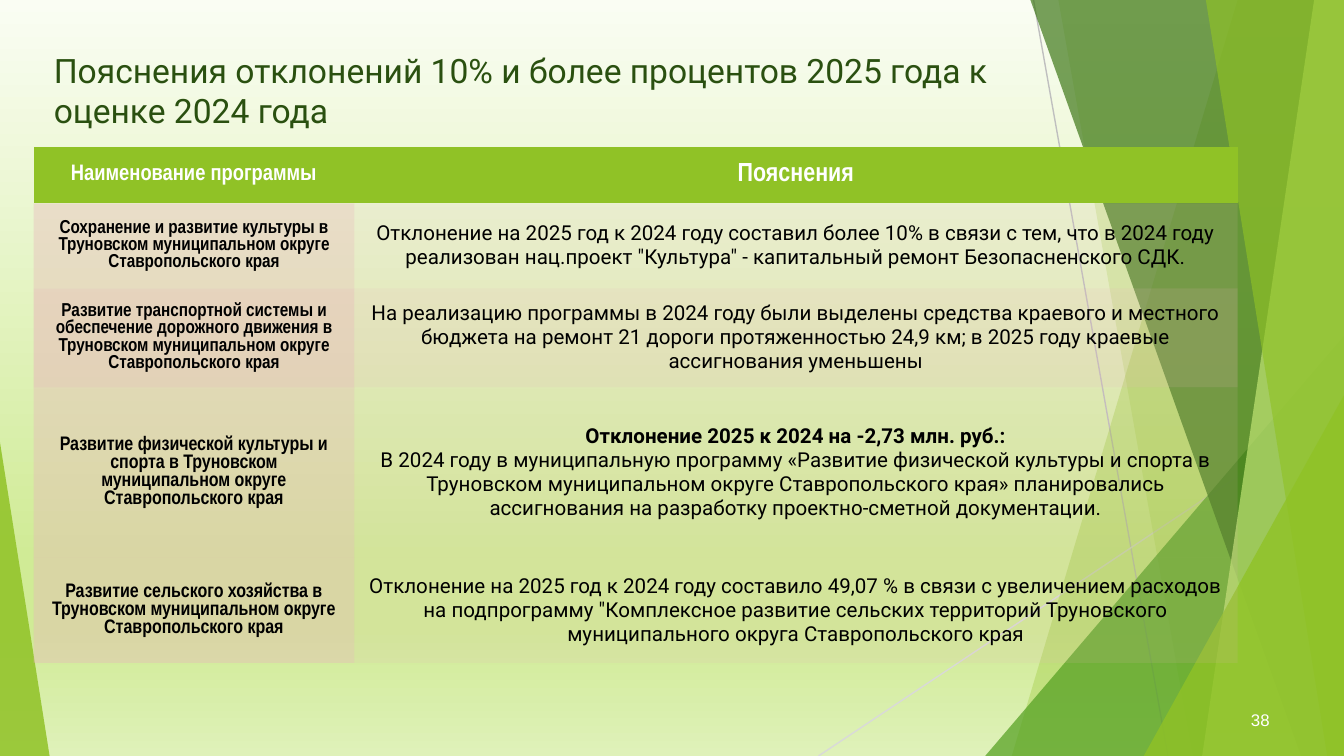
import lxml.etree
import pptx
import pptx.dml.color
import pptx.enum.shapes
import pptx.enum.text
import pptx.oxml.ns
import pptx.util

Pt = pptx.util.Pt
qn = pptx.oxml.ns.qn
Anchor = pptx.enum.text.MSO_ANCHOR
Align = pptx.enum.text.PP_ALIGN

WIDTH, HEIGHT = 720, 405
GREEN, PINK = "90C226", "E8B5BB"
PLAIN_TABLE = "{2D5ABB26-0587-4C30-8999-92F81FD0307C}"

BACKGROUND = [(0, "FAFDF3"), (74, "D0EB96"), (83, "D0EB96"), (100, "DFF1B9")]
LINES = [((553.7, 0), (625.7, HEIGHT), "BFBFBF"), ((WIDTH, 217.4), (438.5, HEIGHT), "D9D9D9")]

# Bands reach the right edge: top x, bottom x, colour, opacity
BACK_BANDS = [(663, 542, GREEN, 30), (567.4, 638.6, GREEN, 20)]
FRONT_BANDS = [
    (551.5, 697, "3F7819", 70),
    (704.2, 643.7, "C0E474", 70),
    (645.8, 711.4, GREEN, 65),
]

COLUMNS = [171.8, 473.2]
ROWS = [30.5, 45.5, 52.5, 91.5, 56.2]
HEADINGS = [("Наименование программы", 12), ("Пояснения", 14)]
# Programme, its text size, opacity of both cells, lines of explanation with boldness
PROGRAMMES = [
    ("Сохранение и развитие культуры в Труновском муниципальном округе Ставропольского края",
     10, (38, 13),
     [("Отклонение на 2025 год к 2024 году составил более 10% в связи с тем, что в 2024 году "
       "реализован нац.проект \"Культура\" - капитальный ремонт Безопасненского СДК.", False)]),
    ("Развитие транспортной системы и обеспечение дорожного движения в Труновском "
     "муниципальном округе Ставропольского края",
     10, (50, 25),
     [("На реализацию программы в 2024 году были выделены средства краевого и местного бюджета "
       "на ремонт 21 дороги протяженностью 24,9 км; в 2025 году краевые ассигнования уменьшены",
       False)]),
    ("Развитие физической культуры и спорта в Труновском муниципальном округе "
     "Ставропольского края",
     10.5, (38, 13),
     [("Отклонение 2025 к 2024 на -2,73 млн. руб.:", True),
      ("В 2024 году в муниципальную программу «Развитие физической культуры и спорта в "
       "Труновском муниципальном округе Ставропольского края» планировались ассигнования на "
       "разработку проектно-сметной документации.", False)]),
    ("Развитие сельского хозяйства в Труновском муниципальном округе Ставропольского края",
     10.5, (38, 13),
     [("Отклонение на 2025 год к 2024 году составило 49,07 % в связи с увеличением расходов на "
       "подпрограмму \"Комплексное развитие сельских территорий Труновского муниципального "
       "округа Ставропольского края", False)]),
]


def color(value):
    return pptx.dml.color.RGBColor.from_string(value)


def points(*lengths):
    return [Pt(length) for length in lengths]


def assign(target, values):
    for name, value in values.items():
        setattr(target, name, value)


class Slide:
    title_style = {"name": "Roboto", "size": 18, "color": "2A5010"}
    number_style = {"name": "Arial", "size": 9, "color": "FFFFFF"}
    name_style = {"name": "Arial Narrow", "bold": True, "color": "000000"}
    heading_style = {**name_style, "color": "FFFFFF"}
    note_style = {"name": "Roboto", "size": 11, "color": "000000"}
    margins = {f"margin_{side}": Pt(7.2) for side in ("left", "right", "top", "bottom")}

    def __init__(self, deck):
        self.page = deck.slides.add_slide(deck.slide_layouts[5])
        self.shapes = self.page.shapes

    def background(self, stops):
        fill = self.page.background.fill
        fill.gradient()
        fill.gradient_angle = 270
        stop_list = next(self.page.element.iter(qn("a:gsLst")))
        stop_list.clear()
        for position, value in stops:
            stop = lxml.etree.SubElement(stop_list, qn("a:gs"), pos=str(position * 1000))
            lxml.etree.SubElement(stop, qn("a:srgbClr"), val=value)

    def paint(self, fill, properties, value, opacity):
        """Fill with a colour; properties is the XML element that holds the fill."""
        fill.solid()
        fill.fore_color.rgb = color(value)
        if opacity < 100:
            tint = next(properties.iter(qn("a:srgbClr")))
            lxml.etree.SubElement(tint, qn("a:alpha"), val=str(opacity * 1000))

    def finish(self, shape, value, opacity):
        shape.shadow.inherit = False
        self.paint(shape.fill, shape.element.spPr, value, opacity)
        shape.line.fill.background()

    def line(self, start, end, value):
        kind = pptx.enum.shapes.MSO_CONNECTOR.STRAIGHT
        connector = self.shapes.add_connector(kind, *points(*start, *end))
        connector.line.width = Pt(0.75)
        connector.line.color.rgb = color(value)
        lxml.etree.SubElement(connector.element.spPr, qn("a:effectLst"))

    def band(self, top, bottom, value, opacity):
        builder = self.shapes.build_freeform(top, 0, scale=Pt(1))
        builder.add_line_segments([(WIDTH, 0), (WIDTH, HEIGHT), (bottom, HEIGHT)], close=True)
        self.finish(builder.convert_to_shape(), value, opacity)

    def triangle(self, left, top, width, apex, value, opacity):
        """Triangle standing on the bottom edge of the slide."""
        kind = pptx.enum.shapes.MSO_SHAPE.ISOSCELES_TRIANGLE
        shape = self.shapes.add_shape(kind, *points(left, top, width, HEIGHT - top))
        shape.adjustments[0] = apex
        self.finish(shape, value, opacity)

    def add_span(self, para, text, style):
        span = para.add_run()
        span.text = text
        values = dict(style, size=Pt(style["size"]))
        span.font.color.rgb = color(values.pop("color"))
        assign(span.font, values)

    def title(self, text, frame):
        box = self.shapes.title
        box.element.getparent().append(box.element)
        assign(box, dict(zip(("left", "top", "width", "height"), points(*frame))))
        assign(box.text_frame, {**self.margins, "word_wrap": True, "vertical_anchor": Anchor.TOP,
                                "auto_size": pptx.enum.text.MSO_AUTO_SIZE.NONE})
        para = box.text_frame.paragraphs[0]
        para.alignment = Align.LEFT
        self.add_span(para, text, self.title_style)

    def number(self, text, frame):
        box = self.shapes.add_textbox(*points(*frame))
        box.text_frame.word_wrap = True
        self.add_span(box.text_frame.paragraphs[0], text, self.number_style)

    def table(self, left, top, columns, rows):
        frame = self.shapes.add_table(
            len(rows), len(columns), *points(left, top, sum(columns), sum(rows)))
        next(frame.element.iter(qn("a:tableStyleId"))).text = PLAIN_TABLE
        assign(frame.table, {"first_row": False, "horz_banding": False})
        for column, width in zip(frame.table.columns, columns):
            column.width = Pt(width)
        for row, height in zip(frame.table.rows, rows):
            row.height = Pt(height)
        return frame.table

    def cell(self, cell, lines, value, opacity=100):
        """Fill a cell with lines, given as pairs of text and style."""
        assign(cell, {**self.margins, "vertical_anchor": Anchor.MIDDLE})
        self.paint(cell.fill, cell._tc.tcPr, value, opacity)
        para = cell.text_frame.paragraphs[0]
        para.alignment = Align.CENTER
        for index, (text, style) in enumerate(lines):
            if index:
                para.add_line_break()
            self.add_span(para, text, style)


def main():
    deck = pptx.Presentation()
    deck.slide_width, deck.slide_height = points(WIDTH, HEIGHT)
    slide = Slide(deck)
    slide.background(BACKGROUND)
    for line in LINES:
        slide.line(*line)
    for band in BACK_BANDS:
        slide.band(*band)
    slide.triangle(527.8, 180, 192.2, 1, "54A021", 72)
    for band in FRONT_BANDS:
        slide.band(*band)
    slide.triangle(612.7, 211.7, 107.3, 1, GREEN, 80)
    slide.triangle(0, 236.9, 26.6, 0, GREEN, 85)

    slide.number("38", (663.1, 376.6, 40.3, 21.6))
    slide.title("Пояснения отклонений 10% и более процентов 2025 года к оценке 2024 года",
                (21.6, 19.4, 514.8, 43.9))
    table = slide.table(18, 78.5, COLUMNS, ROWS)
    for column, (text, size) in enumerate(HEADINGS):
        slide.cell(table.cell(0, column), [(text, {**slide.heading_style, "size": size})], GREEN)
    for row, (name, size, opacities, notes) in enumerate(PROGRAMMES, start=1):
        name_lines = [(name, {**slide.name_style, "size": size})]
        note_lines = [(text, {**slide.note_style, "bold": bold}) for text, bold in notes]
        for column, lines in enumerate((name_lines, note_lines)):
            slide.cell(table.cell(row, column), lines, PINK, opacities[column])
    deck.save("out.pptx")


if __name__ == "__main__":
    main()
